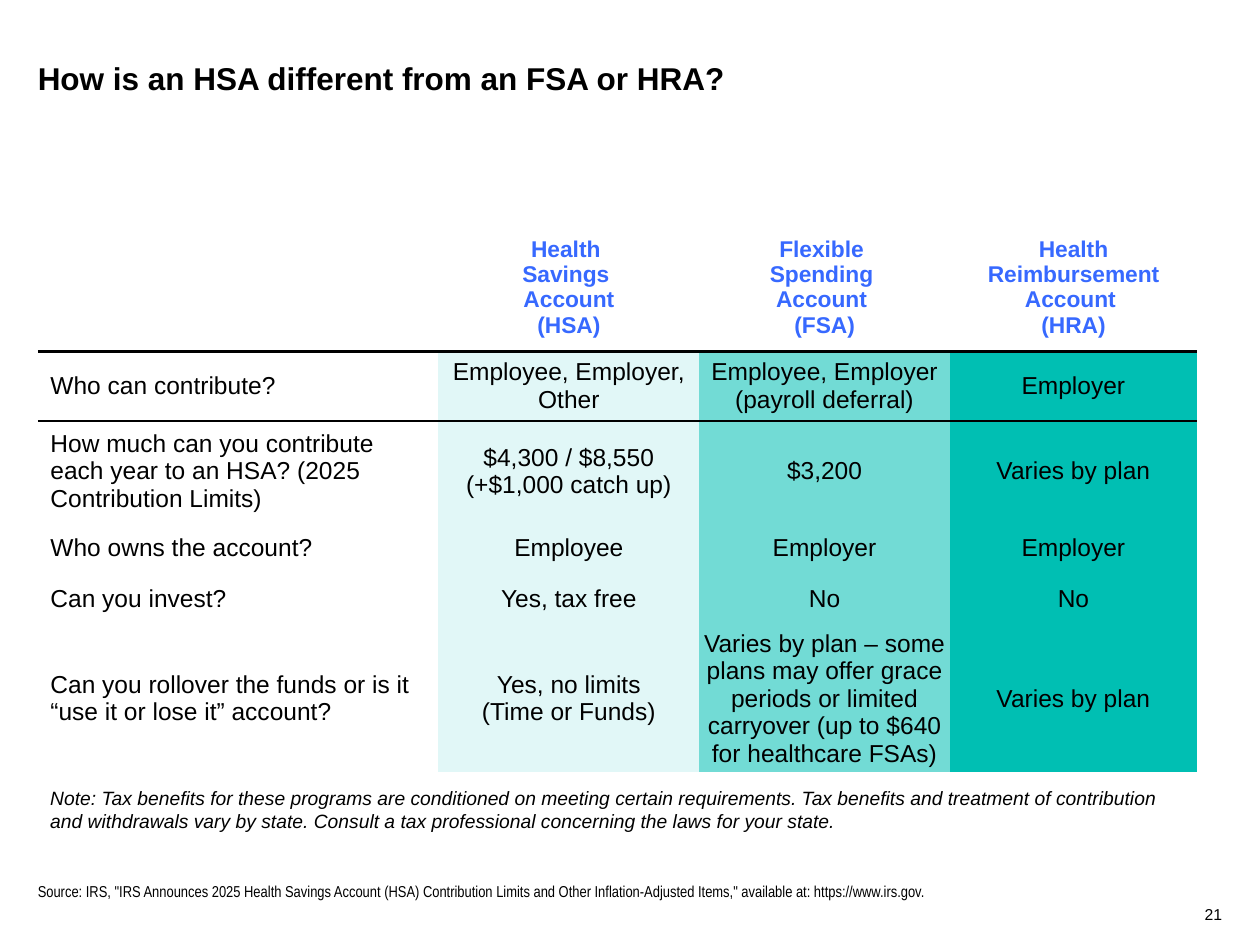
from lxml import etree
from pptx import Presentation
from pptx.dml.color import RGBColor
from pptx.enum.text import MSO_ANCHOR, PP_ALIGN
from pptx.oxml.ns import qn
from pptx.util import Inches, Pt

LEFT, CENTER, RIGHT = PP_ALIGN.LEFT, PP_ALIGN.CENTER, PP_ALIGN.RIGHT
TOP, MIDDLE, BOTTOM = MSO_ANCHOR.TOP, MSO_ANCHOR.MIDDLE, MSO_ANCHOR.BOTTOM

BLACK = RGBColor(0x00, 0x00, 0x00)
BLUE = RGBColor(0x37, 0x69, 0xFF)
COLUMN_FILLS = [None, RGBColor(0xE1, 0xF7, 0xF7), RGBColor(0x72, 0xDB, 0xD5),
                RGBColor(0x00, 0xBF, 0xB3)]
NO_STYLE_NO_GRID = "{2D5ABB26-0587-4C30-8999-92F81FD0307C}"

# Content: "\n" starts a paragraph, "\v" breaks a line within one
TITLE = "How is an HSA different from an FSA or HRA?"
ROWS = [
    ("", "Health \nSavings \nAccount\n(HSA)", "Flexible \nSpending \nAccount \n(FSA)",
     "Health Reimbursement Account \n(HRA)"),
    ("Who can contribute?", "Employee, Employer, Other",
     "Employee, Employer (payroll deferral)", "Employer"),
    ("How much can you contribute each year to an HSA? (2025 Contribution Limits)",
     "$4,300 / $8,550\v(+$1,000 catch up)", "$3,200", "Varies by plan"),
    ("Who owns the account?", "Employee", "Employer", "Employer"),
    ("Can you invest?", "Yes, tax free", "No", "No"),
    ("Can you rollover the funds or is it “use it or lose it” account?",
     "Yes, no limits\n(Time or Funds)",
     "Varies by plan – some plans may offer grace periods or limited carryover "
     "(up to $640 for healthcare FSAs)", "Varies by plan"),
]
NOTE = ("Note: Tax benefits for these programs are conditioned on meeting certain "
        "requirements. Tax benefits and treatment of contribution and withdrawals vary "
        "by state. Consult a tax professional concerning the laws for your state.")
SOURCE = ('Source: IRS, "IRS Announces 2025 Health Savings Account (HSA) Contribution '
          'Limits and Other Inflation-Adjusted Items," available at: https://www.irs.gov.')
PAGE_NUMBER = "21"

# Layout in inches
MARGIN = 0.3
TABLE_TOP = 1.77
COLUMN_WIDTHS = [3.18, 2.07, 1.99, 1.96]
ROW_HEIGHTS = [1.02, 0.55, 0.66, 0.41, 0.41, 0.66]


def format_text(text_frame, size, color=BLACK, align=LEFT, name="Arial",
                bold=False, italic=False):
    for paragraph in text_frame.paragraphs:
        paragraph.alignment = align
        font = paragraph.font
        font.name, font.size, font.bold, font.italic = name, Pt(size), bold, italic
        font.color.rgb = color


def set_margins(target, horizontal, vertical):
    target.margin_left = target.margin_right = Inches(horizontal)
    target.margin_top = target.margin_bottom = Inches(vertical)


def add_text(slide, box, text, size, anchor=TOP, margins=(0, 0), **style):
    text_frame = slide.shapes.add_textbox(*map(Inches, box)).text_frame
    text_frame.word_wrap = True
    text_frame.vertical_anchor = anchor
    set_margins(text_frame, *margins)
    text_frame.text = text
    format_text(text_frame, size, **style)


def add_border(cell, side):
    properties = cell._tc.get_or_add_tcPr()
    line = etree.Element(qn(f"a:{side}"), w=str(Pt(1.5)))
    fill = etree.SubElement(line, qn("a:solidFill"))
    etree.SubElement(fill, qn("a:srgbClr"), val=str(BLACK))
    properties.insert(0, line)


def add_comparison_table(slide):
    frame = slide.shapes.add_table(
        len(ROWS), len(COLUMN_WIDTHS), Inches(MARGIN), Inches(TABLE_TOP),
        Inches(sum(COLUMN_WIDTHS)), Inches(sum(ROW_HEIGHTS)))
    table = frame.table
    table.first_row = table.horz_banding = False
    table._tbl.tblPr.find(qn("a:tableStyleId")).text = NO_STYLE_NO_GRID
    for column, width in zip(table.columns, COLUMN_WIDTHS):
        column.width = Inches(width)
    for row, height in zip(table.rows, ROW_HEIGHTS):
        row.height = Inches(height)

    for row_index, texts in enumerate(ROWS):
        is_header = row_index == 0
        for column_index, text in enumerate(texts):
            is_label = column_index == 0
            cell = table.cell(row_index, column_index)
            cell.vertical_anchor = MIDDLE
            set_margins(cell, *((0.1, 0.05) if is_label else (0, 0)))
            cell.text_frame.text = text
            format_text(cell.text_frame, 13 if is_header else 14,
                        color=BLUE if is_header else BLACK,
                        align=LEFT if is_label else CENTER, bold=is_header)
            if is_header or is_label:
                cell.fill.background()
            else:
                cell.fill.solid()
                cell.fill.fore_color.rgb = COLUMN_FILLS[column_index]
            # Rule between the header and the body
            if row_index < 2:
                add_border(cell, "lnB" if is_header else "lnT")


def main():
    presentation = Presentation()
    presentation.slide_width, presentation.slide_height = Inches(10), Inches(7.5)
    slide = presentation.slides.add_slide(presentation.slide_layouts[6])

    add_text(slide, (MARGIN, 0.47, 7, 0.7), TITLE, 18, bold=True)
    add_comparison_table(slide)
    add_text(slide, (MARGIN, 6.19, 9.19, 0.47), NOTE, 11, margins=(0.1, 0.05), italic=True)

    # Footer
    add_text(slide, (MARGIN, 7, 9.3, 0.15), SOURCE, 9, anchor=BOTTOM, name="Arial Narrow")
    add_text(slide, (9.3, 7.15, 0.4, 0.18), PAGE_NUMBER, 9, anchor=BOTTOM, align=RIGHT)

    presentation.save("out.pptx")


if __name__ == "__main__":
    main()
